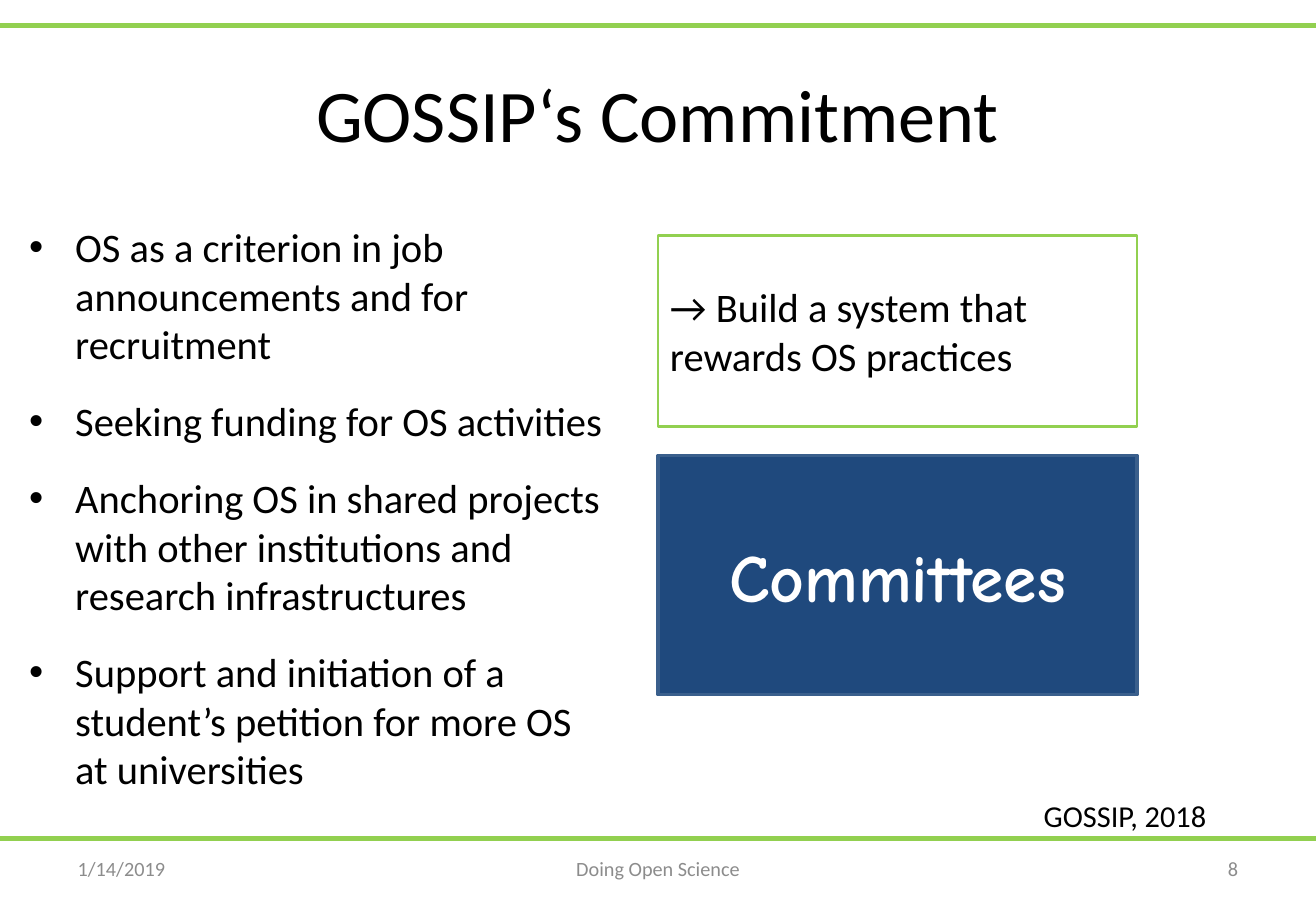
from pptx import Presentation
from pptx.dml.color import RGBColor
from pptx.enum.shapes import MSO_CONNECTOR as Link, MSO_SHAPE as Kind
from pptx.enum.text import MSO_ANCHOR as Anchor, PP_ALIGN as Align
from pptx.oxml.ns import qn
from pptx.util import Inches, Pt
from lxml.etree import SubElement

BLACK = RGBColor(0x00, 0x00, 0x00)
WHITE = RGBColor(0xFF, 0xFF, 0xFF)
GREEN = RGBColor(0x92, 0xD0, 0x50)
NAVY = RGBColor(0x1F, 0x49, 0x7D)
BLUE = RGBColor(0x3A, 0x5F, 0x8C)
GRAY = RGBColor(0x8C, 0x8C, 0x8C)


class Deck:
    font = "Calibri"

    def __init__(self, wide, high):
        self.file = Presentation()
        self.file.slide_width = Inches(wide)
        self.file.slide_height = Inches(high)
        self.slide = self.file.slides.add_slide(self.file.slide_layouts[5])
        self.shapes = self.slide.shapes

    def box(self, left, top, wide, high):
        w, h = self.file.slide_width, self.file.slide_height
        return [int(part * side / 100) for part, side in
                ((left, w), (top, h), (wide, w), (high, h))]

    def words(self, para, text, size, color=BLACK, font=None, bold=False):
        for i, line in enumerate(text.split("\n")):
            if i:
                para.add_line_break()
            run = para.add_run()
            run.text = line
            run.font.name = font or self.font
            run.font.size = Pt(size)
            run.font.bold = bold
            run.font.color.rgb = color

    def fill(self, shape, text, size, align=Align.LEFT, anchor=Anchor.MIDDLE, **look):
        frame = shape.text_frame
        frame.word_wrap = True
        frame.vertical_anchor = anchor
        para = frame.paragraphs[0]
        para.alignment = align
        self.words(para, text, size, **look)

    def title(self, area, text, size):
        shape = self.shapes.title
        shape.left, shape.top, shape.width, shape.height = self.box(*area)
        self.fill(shape, text, size, Align.CENTER)

    def label(self, area, text, size, **look):
        self.fill(self.shapes.add_textbox(*self.box(*area)), text, size, **look)

    def panel(self, area, text, size, edge, width, back=None, **look):
        shape = self.shapes.add_shape(Kind.RECTANGLE, *self.box(*area))
        shape.shadow.inherit = False
        if back is None:
            shape.fill.background()
        else:
            shape.fill.solid()
            shape.fill.fore_color.rgb = back
        shape.line.color.rgb = edge
        shape.line.width = Pt(width)
        self.fill(shape, text, size, **look)

    def rule(self, level, color, width):
        left, top, wide, _ = self.box(0, level, 100, 0)
        line = self.shapes.add_connector(Link.STRAIGHT, left, top, wide, top)
        line.line.color.rgb = color
        line.line.width = Pt(width)
        SubElement(line._element.spPr, qn("a:effectLst"))

    def bullets(self, area, items, size):
        frame = self.shapes.add_textbox(*self.box(*area)).text_frame
        frame.word_wrap = True
        for i, item in enumerate(items):
            para = frame.add_paragraph() if i else frame.paragraphs[0]
            para.space_before = Pt(size * 0.2)
            para.space_after = Pt(size / 2)
            props = para._p.get_or_add_pPr()
            props.set("marL", str(Inches(0.38)))
            props.set("indent", str(Inches(-0.38)))
            SubElement(props, qn("a:buFont"), typeface="Arial")
            SubElement(props, qn("a:buChar"), char="•")
            self.words(para, item, size)


def main():
    deck = Deck(10.83, 7.5)
    for level in (2.8, 92):
        deck.rule(level, GREEN, 3)
    deck.title((5, 4, 90, 16.67), "GOSSIP‘s Commitment", 44)
    for left, wide, text, align in (
        (5, 23.33, "1/14/2019", Align.LEFT),
        (34.17, 31.67, "Doing Open Science", Align.CENTER),
        (71.67, 23.33, "8", Align.RIGHT),
    ):
        deck.label((left, 92.67, wide, 5.33), text, 12, align=align, color=GRAY)
    deck.panel((50, 50, 36.4, 26.27), "Committees", 40, BLUE, 2, NAVY,
               align=Align.CENTER, color=WHITE, font="Comic Neue", bold=True)
    deck.label((78.4, 86.8, 15.24, 5.33), "GOSSIP, 2018", 18, anchor=Anchor.TOP)
    deck.bullets((1.3, 23.73, 47.9, 66), (
        "OS as a criterion in job announcements and for recruitment",
        "Seeking funding for OS activities",
        "Anchoring OS in shared projects with other institutions and research infrastructures",
        "Support and initiation of a student’s petition for more OS \nat universities",
    ), 24)
    deck.panel((50, 25.87, 36.4, 20.93), "→ Build a system that rewards OS practices",
               24, GREEN, 1.5)
    deck.file.save("out.pptx")


if __name__ == "__main__":
    main()
